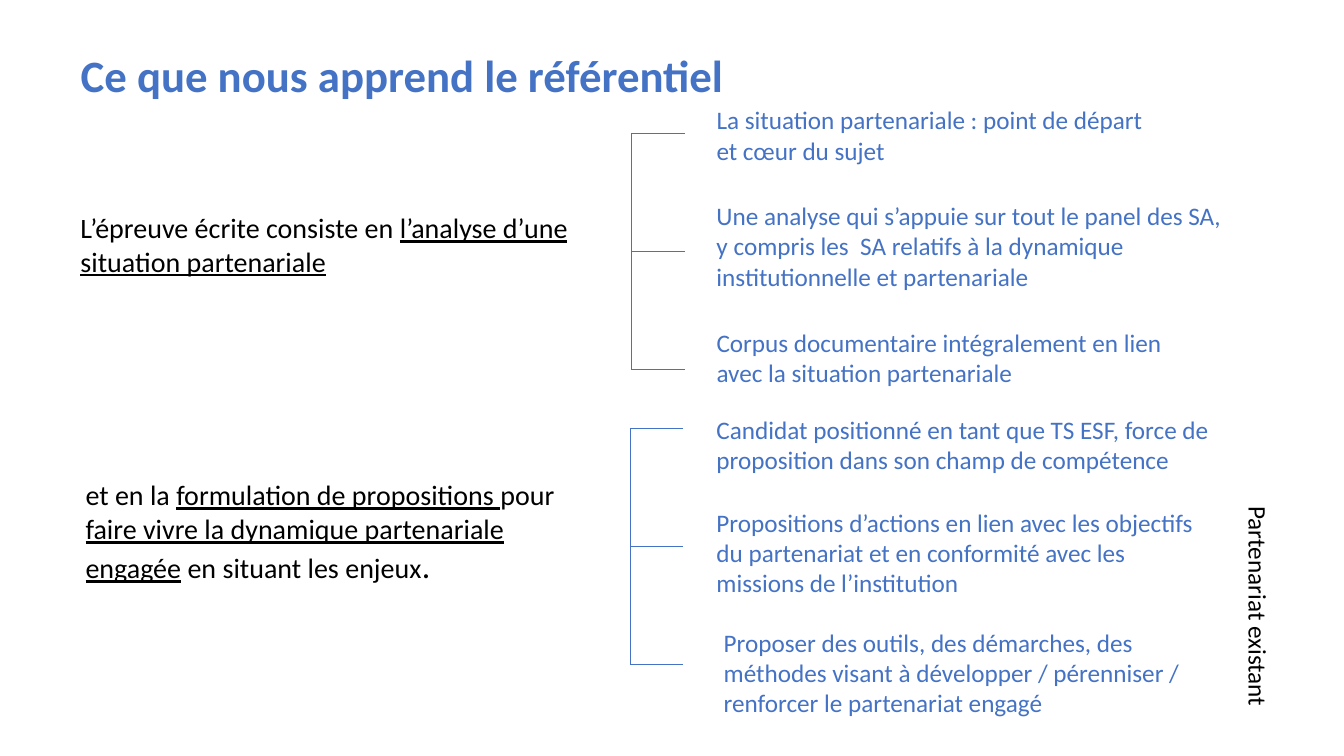
from pptx import Presentation
from pptx.dml.color import RGBColor as RGB
from pptx.enum.shapes import MSO_CONNECTOR as CONN
from pptx.enum.text import MSO_ANCHOR as ANCHOR, MSO_AUTO_SIZE as AUTO, PP_ALIGN as ALIGN
from pptx.oxml.ns import qn
from pptx.util import Pt
from lxml.etree import SubElement

# Content: each run is (text, format); each text is (box in points, runs)
TITLE = "Ce que nous apprend le référentiel"
LINKED = {"underline": True}
STATEMENTS = [
    ((50.4, 146.9, 380.9, 55.4), [
        ("L’épreuve écrite consiste en ", {}),
        ("l’analyse d’une situation partenariale", LINKED)]),
    ((54, 337.7, 365.8, 106.6), [
        ("et en la ", {}),
        ("formulation de propositions ", LINKED),
        ("pour ", {}),
        ("faire vivre la dynamique partenariale engagée", LINKED),
        (" en situant les enjeux", {}),
        (".", {"size": Pt(24)})]),
]
DETAILS = [
    ((504.7, 71.3, 329.8, 51), "La situation partenariale : point de départ et cœur du sujet"),
    ((504.7, 139.7, 384.5, 72.7), "Une analyse qui s’appuie sur tout le panel des SA, y compris les  SA "
                                  "relatifs à la dynamique institutionnelle et partenariale"),
    ((504.7, 230.4, 368.6, 51), "Corpus documentaire intégralement en lien avec la situation partenariale"),
    ((504.7, 292.3, 384.5, 51), "Candidat positionné en tant que TS ESF, force de proposition dans son "
                                "champ de compétence"),
    ((504.7, 358.6, 364.3, 72.7), "Propositions d’actions en lien avec les objectifs du partenariat et en "
                                  "conformité avec les missions de l’institution"),
    ((509.8, 444.2, 373.7, 72.7), "Proposer des outils, des démarches, des méthodes visant à développer / "
                                  "pérenniser / renforcer le partenariat engagé"),
]
SIDE_NOTE = ((809.3, 429.8, 179.3, 28.8), "Partenariat existant")
BRACKETS = [(451, 95), (450, 306)]  # top left corners
ARM, PITCH, ARMS = 38, 84.25, 3

BLUE, BLACK = RGB(0x44, 0x72, 0xC4), RGB(0, 0, 0)
THEME = {
    "title": {"size": Pt(32), "bold": True, "color": BLUE},
    "statement": {"size": Pt(20), "color": BLACK},
    "detail": {"size": Pt(18), "color": BLUE},
    "note": {"size": Pt(18), "color": BLACK},
    "font": "Calibri", "line": BLUE, "line_width": Pt(0.5),
}


def add_run(p, text, fmt):
    r = p.add_run()
    r.text = text
    r.font.name = THEME["font"]
    for name, value in fmt.items():
        if name == "color":
            r.font.color.rgb = value
        else:
            setattr(r.font, name, value)


def add_text(box, runs, style):
    sp = slide.shapes.add_textbox(*map(Pt, box))
    tf = sp.text_frame
    tf.word_wrap = True
    for text, fmt in runs:
        add_run(tf.paragraphs[0], text, {**THEME[style], **fmt})
    return sp


def add_line(x1, y1, x2, y2):
    line = slide.shapes.add_connector(CONN.STRAIGHT, *map(Pt, (x1, y1, x2, y2)))
    line.line.color.rgb = THEME["line"]
    line.line.width = THEME["line_width"]
    SubElement(line._element.spPr, qn("a:effectLst"))


prs = Presentation()
prs.slide_width, prs.slide_height = Pt(960), Pt(540)
slide = prs.slides.add_slide(prs.slide_layouts[5])

# Title
title = slide.shapes.title
for name, value in {"left": 50.4, "top": 28.8, "width": 839.5, "height": 53.3}.items():
    setattr(title, name, Pt(value))
tf = title.text_frame
for name, value in {"auto_size": AUTO.NONE, "word_wrap": True,
                    "vertical_anchor": ANCHOR.MIDDLE}.items():
    setattr(tf, name, value)
p = tf.paragraphs[0]
p.alignment, p.line_spacing = ALIGN.LEFT, 0.9
add_run(p, TITLE, THEME["title"])

# Statements on the left, details on the right
for box, runs in STATEMENTS:
    add_text(box, runs, "statement")
for box, text in DETAILS:
    add_text(box, [(text, {})], "detail")

# Brackets: one spine with evenly spaced arms
for x, y in BRACKETS:
    add_line(x, y, x, y + PITCH * (ARMS - 1))
    for i in range(ARMS):
        add_line(x, y + i * PITCH, x + ARM, y + i * PITCH)

# Vertical note
box, text = SIDE_NOTE
add_text(box, [(text, {})], "note").rotation = 90

prs.save("out.pptx")
